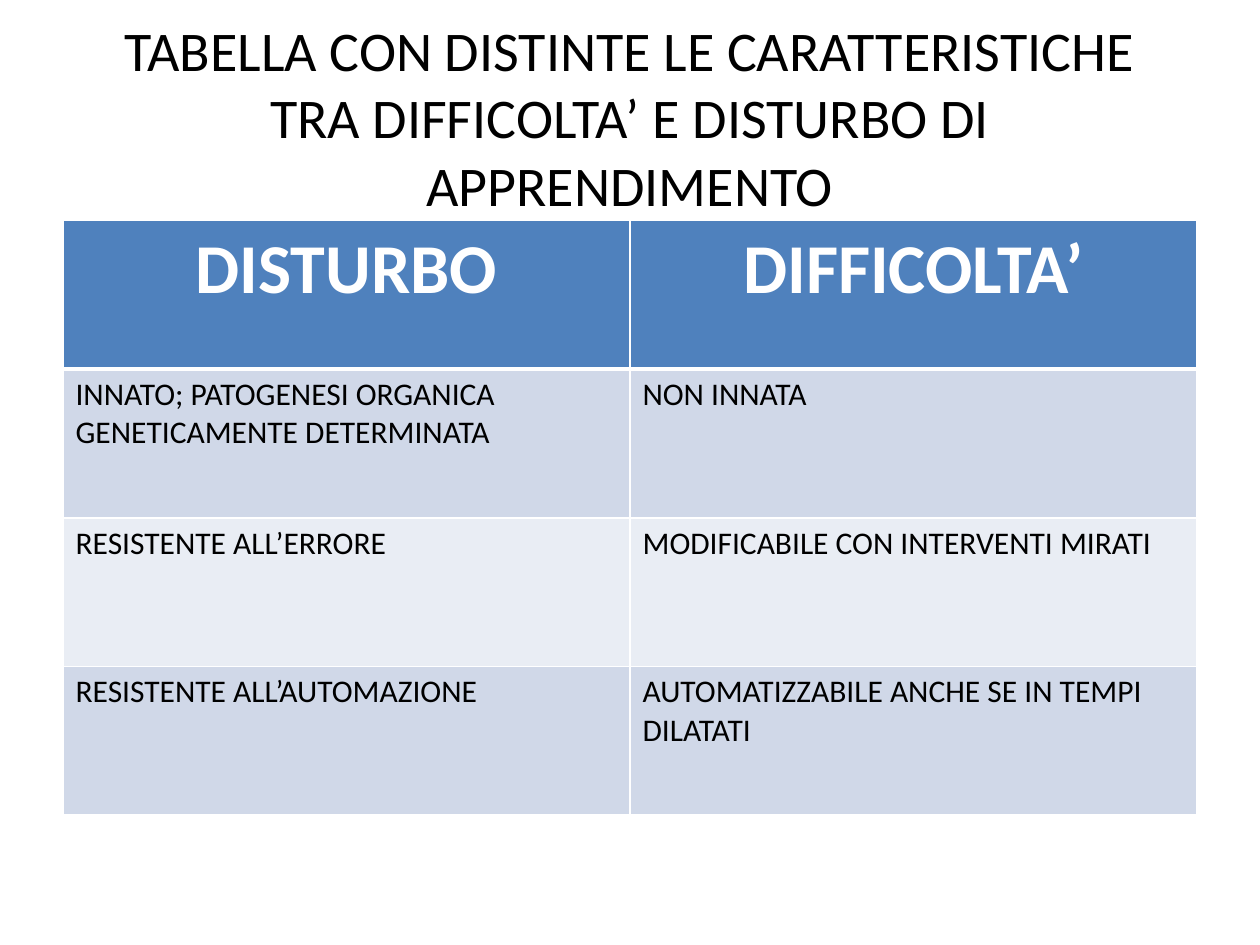
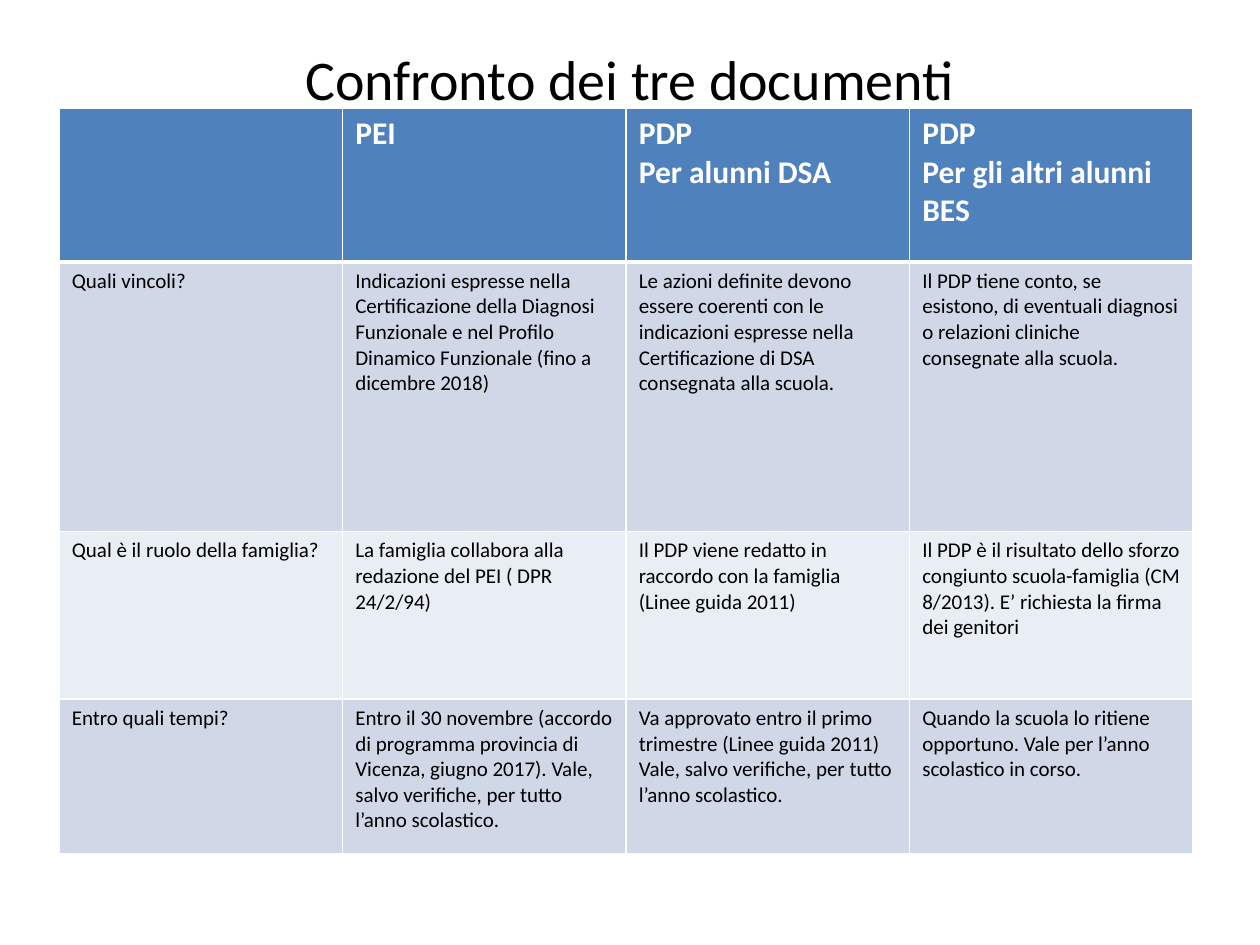
from lxml import etree
from pptx import Presentation, util as u
from pptx.dml.color import RGBColor
from pptx.enum import text
from pptx.oxml import ns

FONT = "Calibri"
BLACK, WHITE = "000000", "FFFFFF"
HEADER_FILL = "4F81BD"
BAND_FILLS = ["D0D8E8", "E9EDF4"]
TITLE_SIZE = 32
CENTER, LEFT = text.PP_ALIGN.CENTER, text.PP_ALIGN.LEFT

COMPARISONS = [
    {
        "title": "TABELLA CON DISTINTE LE CARATTERISTICHE TRA DIFFICOLTA’ E DISTURBO DI APPRENDIMENTO",
        "title_height": 1.25,
        "grid_at": (0.5, 1.75),
        "row_heights": [1.18] * 4,
        "header_style": (40, CENTER),
        "body_size": 18,
        "rows": [
            ["DISTURBO", "DIFFICOLTA’"],
            ["INNATO; PATOGENESI ORGANICA GENETICAMENTE DETERMINATA", "NON INNATA"],
            ["RESISTENTE ALL’ERRORE", "MODIFICABILE CON INTERVENTI MIRATI"],
            ["RESISTENTE ALL’AUTOMAZIONE", "AUTOMATIZZABILE ANCHE SE IN TEMPI DILATATI"],
        ],
    },
    {
        "title": "Confronto dei tre documenti",
        "title_height": 0.64,
        "grid_at": (0.47, 0.86),
        "row_heights": [1.22, 2.14, 1.33, 1.23],
        "header_style": (18, LEFT),
        "body_size": 12,
        "rows": [
            ["", "PEI", "PDP\nPer alunni DSA", "PDP\nPer gli altri alunni BES"],
            [
                "Quali vincoli?",
                "Indicazioni espresse nella Certificazione della Diagnosi Funzionale "
                "e nel Profilo Dinamico Funzionale (fino a dicembre 2018)",
                "Le azioni definite devono essere coerenti con le indicazioni espresse "
                "nella Certificazione di DSA consegnata alla scuola.",
                "Il PDP tiene conto, se esistono, di eventuali diagnosi o relazioni "
                "cliniche consegnate alla scuola.",
            ],
            [
                "Qual è il ruolo della famiglia?",
                "La famiglia collabora alla redazione del PEI ( DPR 24/2/94)",
                "Il PDP viene redatto in raccordo con la famiglia\n(Linee guida 2011)",
                "Il PDP è il risultato dello sforzo congiunto scuola-famiglia "
                "(CM 8/2013). E’ richiesta la firma dei genitori",
            ],
            [
                "Entro quali tempi?",
                "Entro il 30 novembre (accordo di programma provincia di Vicenza, "
                "giugno 2017). Vale, salvo verifiche, per tutto l’anno scolastico.",
                "Va approvato entro il primo trimestre (Linee guida 2011)\n"
                "Vale, salvo verifiche, per tutto l’anno scolastico.",
                "Quando la scuola lo ritiene opportuno. Vale per l’anno scolastico in corso.",
            ],
        ],
    },
]

LEFT_EDGE, TITLE_TOP, CONTENT_WIDTH = 0.5, 0.3, 9


def color(value):
    return RGBColor.from_string(value)


def write(frame, words, size, hue, bold=False, align=LEFT):
    frame.text = words
    for paragraph in frame.paragraphs:
        paragraph.alignment = align
        for run in paragraph.runs:
            run.font.name = FONT
            run.font.size = u.Pt(size)
            run.font.bold = bold
            run.font.color.rgb = color(hue)


def border(cell, top, bottom):
    properties = cell._tc.get_or_add_tcPr()
    for side, width in (("L", 1), ("R", 1), ("T", top), ("B", bottom)):
        line = etree.SubElement(properties, ns.qn(f"a:ln{side}"), w=str(u.Pt(width)))
        fill = etree.SubElement(line, ns.qn("a:solidFill"))
        etree.SubElement(fill, ns.qn("a:srgbClr"), val=WHITE)


def add_title(slide, words, height):
    title = slide.shapes.add_textbox(*map(u.Inches, (LEFT_EDGE, TITLE_TOP, CONTENT_WIDTH, height)))
    title.text_frame.word_wrap = True
    title.text_frame.vertical_anchor = text.MSO_ANCHOR.MIDDLE
    write(title.text_frame, words, TITLE_SIZE, BLACK, align=CENTER)


def add_grid(slide, comparison):
    rows, heights = comparison["rows"], comparison["row_heights"]
    box = (*comparison["grid_at"], CONTENT_WIDTH, sum(heights))
    grid = slide.shapes.add_table(len(rows), len(rows[0]), *map(u.Inches, box)).table
    for column in grid.columns:
        column.width = u.Inches(CONTENT_WIDTH / len(rows[0]))
    header_size, header_align = comparison["header_style"]
    for r, entries in enumerate(rows):
        grid.rows[r].height = u.Inches(heights[r])
        for c, words in enumerate(entries):
            cell = grid.cell(r, c)
            border(cell, top=3 if r == 1 else 1, bottom=3 if r == 0 else 1)
            cell.fill.solid()
            if r == 0:
                cell.fill.fore_color.rgb = color(HEADER_FILL)
                write(cell.text_frame, words, header_size, WHITE, True, header_align)
            else:
                cell.fill.fore_color.rgb = color(BAND_FILLS[(r - 1) % 2])
                write(cell.text_frame, words, comparison["body_size"], BLACK)


def main():
    deck = Presentation()
    deck.slide_width, deck.slide_height = u.Inches(10), u.Inches(7.5)
    for comparison in COMPARISONS:
        slide = deck.slides.add_slide(deck.slide_layouts[6])
        add_title(slide, comparison["title"], comparison["title_height"])
        add_grid(slide, comparison)
    deck.save("out.pptx")


if __name__ == "__main__":
    main()
